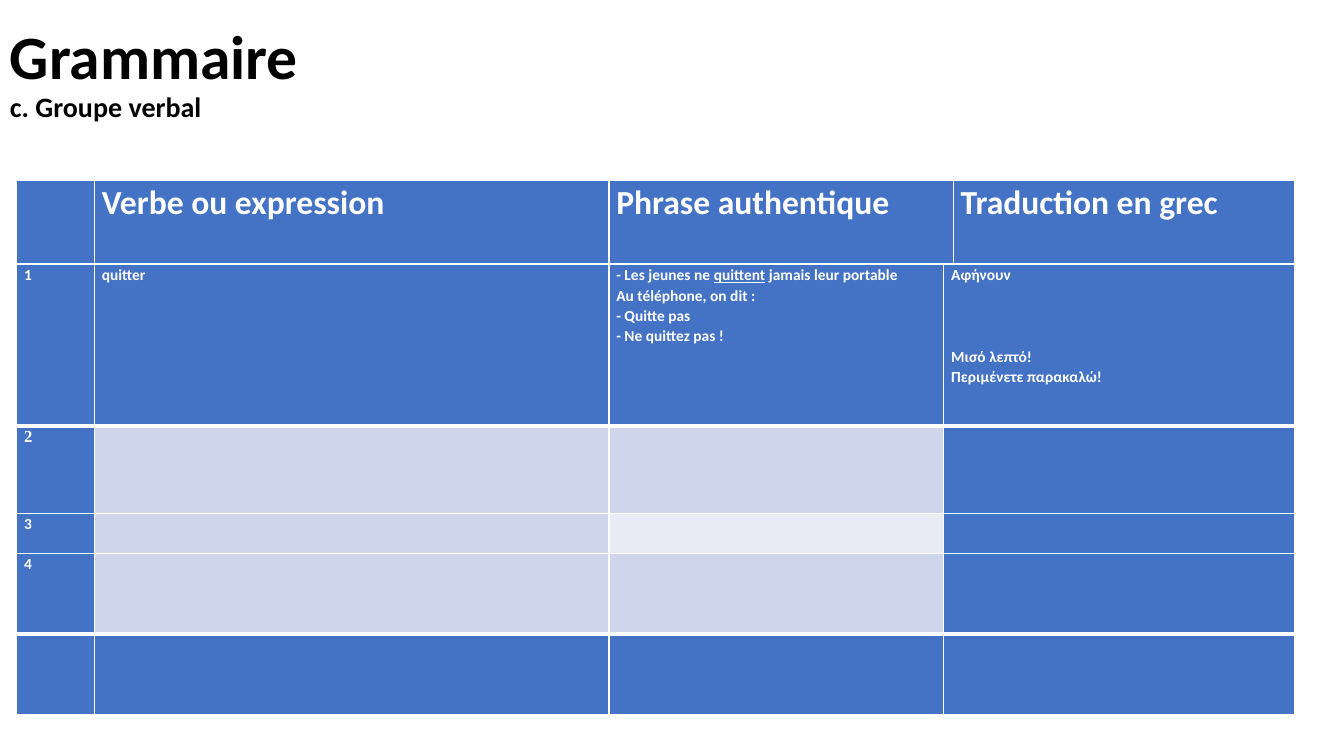
from dataclasses import dataclass

from lxml.etree import SubElement
from pptx import Presentation
from pptx.dml.color import RGBColor as RGB
from pptx.enum.text import MSO_ANCHOR as Anchor
from pptx.oxml.ns import qn
from pptx.util import Pt


@dataclass(frozen=True)
class Theme:
    """Colours, fonts and type sizes of the slide."""
    blue: str = "4472C4"
    band: str = "CFD5EA"
    pale: str = "E9EBF5"
    white: str = "FFFFFF"
    black: str = "000000"
    font: str = "Calibri"
    serif: str = "Times New Roman"
    title: int = 44
    subtitle: int = 20
    header: int = 24
    body: int = 11
    serif_body: int = 12
    thin: int = 1
    thick: int = 3


T = Theme()
HEADINGS = ["", "Verbe ou expression", "Phrase authentique", "Traduction en grec"]
EXAMPLES = [
    ("- Les jeunes ne ", "quittent", " jamais leur portable"),
    ("Au téléphone, on dit :",),
    ("- Quitte pas",),
    ("- Ne quittez pas !",),
]
GREEK = [("Αφήνουν",), ("Μισό λεπτό!",), ("Περιμένετε παρακαλώ!",)]
VERBS = [
    [[("1",)], [("quitter",)], EXAMPLES, GREEK],
    [[("2",)], [], [], []],
    [[("3",)], [], [], []],
    [[("4",)], [], [], []],
    [[], [], [], []],
]
VERB_FILLS = [
    [T.blue] * 4,
    [T.blue, T.band, T.band, T.blue],
    [T.blue, T.band, T.pale, T.blue],
    [T.blue, T.band, T.band, T.blue],
    [T.blue] * 4,
]


def px(n):
    """Turn whole pixels into EMU."""
    return n * 9525


def style(p, size, color, font=T.font):
    """Set the bold type shared by all runs of a paragraph."""
    p.font.name, p.font.bold = font, True
    p.font.color.rgb = RGB.from_string(color)
    if size:
        p.font.size = Pt(size)


def add_title(s, x, y, w, h):
    """Place the title with its smaller second line."""
    tf = s.shapes.add_textbox(px(x), px(y), px(w), px(h)).text_frame
    tf.word_wrap, tf.vertical_anchor = True, Anchor.MIDDLE
    p = tf.paragraphs[0]
    p.line_spacing = 0.9
    style(p, None, T.black)
    r = p.add_run()
    r.text, r.font.size = "Grammaire", Pt(T.title)
    p.add_line_break()
    r = p.add_run()
    r.text, r.font.size = "c. Groupe verbal", Pt(T.subtitle)


def set_borders(cell, top, bottom):
    """Draw white borders with the given top and bottom widths."""
    pr = cell._tc.get_or_add_tcPr()
    for side, width in zip("LRTB", (T.thin, T.thin, top, bottom)):
        ln = SubElement(pr, qn(f"a:ln{side}"), w=str(Pt(width)))
        fill = SubElement(ln, qn("a:solidFill"))
        SubElement(fill, qn("a:srgbClr"), val=T.white)


def fill_cell(cell, paragraphs, color, size, font=T.font):
    """Fill a cell and write its paragraphs, underlining every second run."""
    cell.margin_left = cell.margin_right = px(7)
    cell.margin_top = cell.margin_bottom = 0
    cell.fill.solid()
    cell.fill.fore_color.rgb = RGB.from_string(color)
    tf = cell.text_frame
    for i, runs in enumerate(paragraphs or [()]):
        p = tf.add_paragraph() if i else tf.paragraphs[0]
        p.line_spacing = 1.07
        style(p, size, T.white, font)
        for j, text in enumerate(runs):
            r = p.add_run()
            r.text = text
            if j % 2:
                r.font.underline = True


def add_grid(s, x, y, widths, heights):
    """Place a plain table with the given column and row sizes."""
    frame = s.shapes.add_table(len(heights), len(widths), px(x), px(y),
                               px(sum(widths)), px(sum(heights)))
    table = frame.table
    table.first_row = table.horz_banding = False
    for col, w in zip(table.columns, widths):
        col.width = px(w)
    for row, h in zip(table.rows, heights):
        row.height = px(h)
    return table


def add_header(s, x, y, widths, height):
    """Place the one-row table of column headings."""
    table = add_grid(s, x, y, widths, [height])
    for c, text in enumerate(HEADINGS):
        cell = table.cell(0, c)
        set_borders(cell, T.thick, T.thick)
        fill_cell(cell, [(text,)] if text else [], T.blue, T.header)


def add_verbs(s, x, y, widths, heights):
    """Place the table of verbs, with thick rules after its first and fourth rows."""
    table = add_grid(s, x, y, widths, heights)
    for i, (row, fills) in enumerate(zip(VERBS, VERB_FILLS)):
        top = T.thick if i in (1, 4) else T.thin
        bottom = T.thick if i in (0, 3) else T.thin
        serif = i == 1
        for c, (paragraphs, color) in enumerate(zip(row, fills)):
            cell = table.cell(i, c)
            set_borders(cell, top, bottom)
            fill_cell(cell, paragraphs, color,
                      T.serif_body if serif else T.body,
                      T.serif if serif else T.font)
    table.cell(0, 3).text_frame.paragraphs[1].space_before = Pt(44)


def main():
    """Build the slide and save it."""
    prs = Presentation()
    prs.slide_width, prs.slide_height = px(1280), px(720)
    s = prs.slides.add_slide(prs.slide_layouts[6])
    add_title(s, 0, 2, 1104, 139)
    add_header(s, 16, 171, [74, 490, 328, 325], 81)
    add_verbs(s, 16, 252, [74, 490, 319, 334], [154, 83, 38, 77, 77])
    prs.save("out.pptx")


if __name__ == "__main__":
    main()
